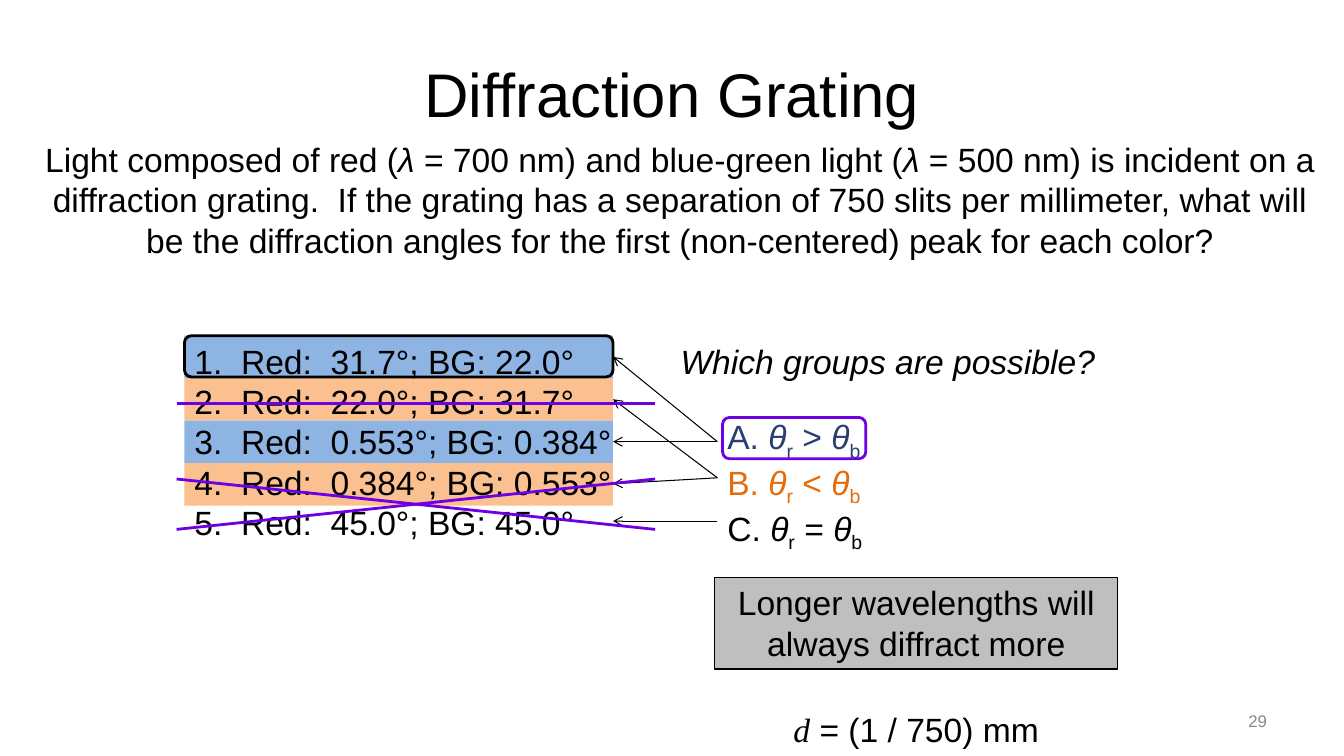
from dataclasses import dataclass
from typing import Optional

from lxml.etree import SubElement
from pptx import Presentation
from pptx.dml.color import RGBColor
from pptx.enum.shapes import MSO_CONNECTOR, MSO_SHAPE
from pptx.enum.text import MSO_ANCHOR, MSO_AUTO_SIZE, PP_ALIGN
from pptx.oxml.ns import qn
from pptx.util import Cm, Pt

COLORS = {
    "black": "000000",
    "blue": "8EB4E3",
    "orange": "FAC090",
    "navy": "293F6F",
    "dark_orange": "E46C0A",
    "purple": "6F00E3",
    "gray": "BFBFBF",
    "page_gray": "898989",
}


@dataclass
class Box:
    left: float
    top: float
    width: float
    height: float

    def lengths(self) -> tuple:
        return Cm(self.left), Cm(self.top), Cm(self.width), Cm(self.height)


@dataclass
class Piece:
    text: str
    italic: bool = False
    subscript: bool = False
    font: str = "Arial"


@dataclass
class Line:
    pieces: list[Piece]
    color: str = "black"


@dataclass
class Stroke:
    start: tuple[float, float]
    end: tuple[float, float]


def color(name: str) -> RGBColor:
    return RGBColor.from_string(COLORS[name])


def write(shape, lines: list[Line], align=PP_ALIGN.LEFT, size: float = 24,
          anchor=MSO_ANCHOR.TOP) -> None:
    frame = shape.text_frame
    frame.word_wrap = True
    frame.auto_size = MSO_AUTO_SIZE.NONE
    frame.vertical_anchor = anchor
    for index, line in enumerate(lines):
        paragraph = frame.add_paragraph() if index else frame.paragraphs[0]
        paragraph.alignment = align
        for piece in line.pieces:
            run = paragraph.add_run()
            run.text = piece.text
            run.font.name = piece.font
            run.font.size = Pt(size)
            run.font.italic = piece.italic
            run.font.color.rgb = color(line.color)
            if piece.subscript:
                run.font._element.set("baseline", "-25000")


def add_text(slide, box: Box, lines: list[Line], **options) -> None:
    write(slide.shapes.add_textbox(*box.lengths()), lines, **options)


def add_box(slide, box: Box, fill: Optional[str] = None, outline: Optional[str] = None,
            width: float = 2, kind=MSO_SHAPE.RECTANGLE):
    shape = slide.shapes.add_shape(kind, *box.lengths())
    shape.shadow.inherit = False
    if fill:
        shape.fill.solid()
        shape.fill.fore_color.rgb = color(fill)
    else:
        shape.fill.background()
    if outline:
        shape.line.color.rgb = color(outline)
        shape.line.width = Pt(width)
    else:
        shape.line.fill.background()
    return shape


def add_stroke(slide, stroke: Stroke, name: str, width: float, arrow: bool = False) -> None:
    points = [Cm(value) for value in (*stroke.start, *stroke.end)]
    connector = slide.shapes.add_connector(MSO_CONNECTOR.STRAIGHT, *points)
    connector.line.color.rgb = color(name)
    connector.line.width = Pt(width)
    if arrow:
        SubElement(connector.line._get_or_add_ln(), qn("a:tailEnd"), type="arrow")
    SubElement(connector._element.spPr, qn("a:effectLst"))


def comparison(letter: str, sign: str, name: str) -> Line:
    return Line([
        Piece(f"{letter}. "), Piece("θ", italic=True), Piece("r", subscript=True),
        Piece(f" {sign} "), Piece("θ", italic=True), Piece("b", subscript=True),
    ], name)


ANSWERS = [("31.7", "22.0"), ("22.0", "31.7"), ("0.553", "0.384"),
           ("0.384", "0.553"), ("45.0", "45.0")]
GROUPS = [("A", ">", "navy"), ("B", "<", "dark_orange"), ("C", "=", "black")]
PROBLEM = [
    Piece("Light composed of red ("), Piece("λ", italic=True),
    Piece(" = 700 nm) and blue-green light ("), Piece("λ", italic=True),
    Piece(" = 500 nm) is incident on a diffraction grating.  If the grating has a "
          "separation of 750 slits per millimeter, what will be the diffraction angles "
          "for the first (non-centered) peak for each color?"),
]
# Height of each group's arrow start, and of the answers it points to
GROUP_ARROWS = [(11.13, [8.99, 11.13]), (12.04, [10.06, 12.19]), (13.13, [13.13])]
# Left and right heights of the lines crossing out wrong answers
STRIKES = [(10.16, 10.16), (12.07, 13.34), (13.34, 12.07)]
ANSWER_LEFT, ANSWER_TOP, ANSWER_WIDTH, STRIPE_HEIGHT = 4.65, 8.46, 10.8, 1.07


def main() -> None:
    presentation = Presentation()
    presentation.slide_width, presentation.slide_height = Cm(33.87), Cm(19.05)
    slide = presentation.slides.add_slide(presentation.slide_layouts[5])

    # Title and problem
    title = slide.shapes.title
    title.left, title.top, title.width, title.height = Box(1.7, 0.76, 30.48, 3.18).lengths()
    write(title, [Line([Piece("Diffraction Grating")])], PP_ALIGN.CENTER, 44,
          MSO_ANCHOR.MIDDLE)

    # Stripes that colour the answers by group
    for index in range(4):
        top = ANSWER_TOP + index * STRIPE_HEIGHT
        add_box(slide, Box(ANSWER_LEFT, top, ANSWER_WIDTH, STRIPE_HEIGHT),
                "orange" if index % 2 else "blue")

    # Groups and their arrows
    add_text(slide, Box(16.51, ANSWER_TOP, 11.73, 1.27),
             [Line([Piece("Which groups are possible?", italic=True)])],
             align=PP_ALIGN.CENTER)
    add_text(slide, Box(18.08, 10.36, 8.79, 3.33), [comparison(*group) for group in GROUPS])
    for start, ends in GROUP_ARROWS:
        for end in ends:
            add_stroke(slide, Stroke((18.08, start), (15.45, end)), "black", 0.75, arrow=True)

    # Problem and answers
    add_text(slide, Box(0.84, 3.38, 32.59, 3.33), [Line(PROBLEM)], align=PP_ALIGN.CENTER)
    add_text(slide, Box(ANSWER_LEFT, ANSWER_TOP, 12.9, 5.33),
             [Line([Piece(f"{number}.  Red:  {red}°; BG: {blue_green}°")])
              for number, (red, blue_green) in enumerate(ANSWERS, 1)])

    # Conclusion and grating spacing
    note = add_box(slide, Box(18.01, 14.55, 10.16, 2.31), "gray", "black", 0.75)
    write(note, [Line([Piece("Longer wavelengths will always diffract more")])],
          PP_ALIGN.CENTER)
    add_box(slide, Box(ANSWER_LEFT, ANSWER_TOP, ANSWER_WIDTH, 1.04), outline="black",
            kind=MSO_SHAPE.ROUNDED_RECTANGLE)
    add_text(slide, Box(18.01, 17.73, 10.16, 1.3),
             [Line([Piece("d", italic=True, font="Times New Roman"),
                    Piece(" = (1 / 750) mm")])], align=PP_ALIGN.CENTER)

    # Crossed-out answers and the chosen group
    for left_height, right_height in STRIKES:
        add_stroke(slide, Stroke((4.45, left_height), (16.51, right_height)), "purple", 2)
    add_box(slide, Box(18.21, 10.52, 3.61, 1.04), outline="purple",
            kind=MSO_SHAPE.ROUNDED_RECTANGLE)

    # Page number
    add_text(slide, Box(24.28, 17.65, 7.9, 1.02), [Line([Piece("29")], "page_gray")],
             align=PP_ALIGN.RIGHT, size=12, anchor=MSO_ANCHOR.MIDDLE)

    presentation.save("out.pptx")


if __name__ == "__main__":
    main()
